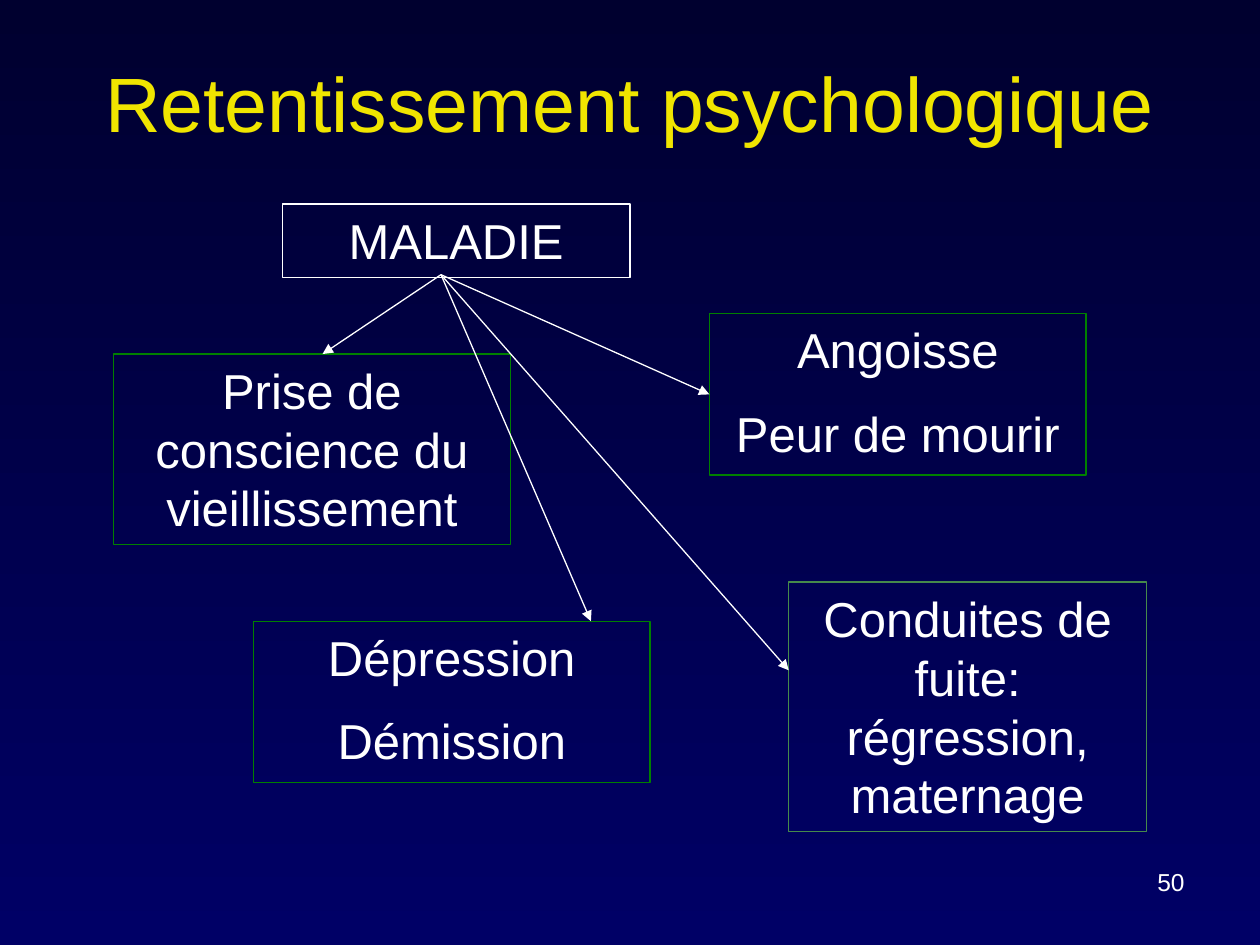
from lxml import etree
from pptx import Presentation
from pptx.dml.color import RGBColor
from pptx.enum.shapes import MSO_CONNECTOR, MSO_SHAPE
from pptx.enum.text import MSO_ANCHOR, PP_ALIGN
from pptx.oxml.ns import qn
from pptx.util import Inches, Pt

COLORS = {
    "top": "00002F", "bottom": "000066", "title": "F0E500",
    "white": "FFFFFF", "green": "008000", "pale_green": "468A4B",
}


def color(name):
    return RGBColor.from_string(COLORS[name])


def write(box, lines, size, font_color, align, anchor=MSO_ANCHOR.TOP):
    frame = box.text_frame
    for name, value in {"word_wrap": True, "vertical_anchor": anchor}.items():
        setattr(frame, name, value)
    for number, line in enumerate(lines):
        para = frame.add_paragraph() if number else frame.paragraphs[0]
        para.alignment = align
        if number:
            para.space_before = Pt(size / 2)
        span = para.add_run()
        span.text = line
        for name, value in {"name": "Arial", "size": Pt(size)}.items():
            setattr(span.font, name, value)
        span.font.color.rgb = color(font_color)


deck = Presentation()
deck.slide_width, deck.slide_height = Inches(10), Inches(7.5)
page = deck.slides.add_slide(deck.slide_layouts[6])

# Background, dark at the top
backdrop = page.background.fill
backdrop.gradient()
backdrop.gradient_angle = 270
for stop, name in zip(backdrop.gradient_stops, ("top", "bottom")):
    stop.color.rgb = color(name)

# Title
title = page.shapes.add_textbox(Inches(0.5), Inches(0.3), Inches(9), Inches(1.01))
write(title, ["Retentissement psychologique"], 44, "title", PP_ALIGN.CENTER,
      MSO_ANCHOR.MIDDLE)

# Illness and its consequences
boxes = {}
for key, place, outline, lines in [
    ("illness", (2.24, 1.62, 2.76, 0.58), "white", ["MALADIE"]),
    ("anxiety", (5.63, 2.49, 2.99, 1.28), "green", ["Angoisse", "Peur de mourir"]),
    ("depression", (2.01, 4.93, 3.15, 1.28), "green", ["Dépression", "Démission"]),
    ("ageing", (0.9, 2.81, 3.15, 1.51), "green",
     ["Prise de conscience du vieillissement"]),
    ("escape", (6.26, 4.62, 2.84, 1.98), "pale_green",
     ["Conduites de fuite: régression, maternage"]),
]:
    box = page.shapes.add_shape(MSO_SHAPE.RECTANGLE, *map(Inches, place))
    box.shadow.inherit = False
    box.fill.background()
    box.line.color.rgb = color(outline)
    box.line.width = Pt(0.75)
    write(box, lines, 28, "white", PP_ALIGN.CENTER)
    boxes[key] = box

# Arrows fanning out from the illness
start = Inches(3.5), Inches(2.18)
arrows = {}
for key, end in {
    "ageing": (2.56, 2.81),
    "anxiety": (5.63, 3.13),
    "depression": (4.69, 4.93),
    "escape": (6.26, 5.32),
}.items():
    arrow = page.shapes.add_connector(MSO_CONNECTOR.STRAIGHT, *start, *map(Inches, end))
    arrow.line.color.rgb = color("white")
    arrow.line.width = Pt(0.75)
    etree.SubElement(arrow.line._get_or_add_ln(), qn("a:tailEnd"), type="triangle")
    etree.SubElement(arrow._element.spPr, qn("a:effectLst"))
    arrows[key] = arrow
arrows["anxiety"].end_connect(boxes["anxiety"], 1)

# Page number
number_box = page.shapes.add_textbox(Inches(7.17), Inches(6.83), Inches(2.33), Inches(0.52))
write(number_box, ["50"], 14, "white", PP_ALIGN.RIGHT)

deck.save("out.pptx")
